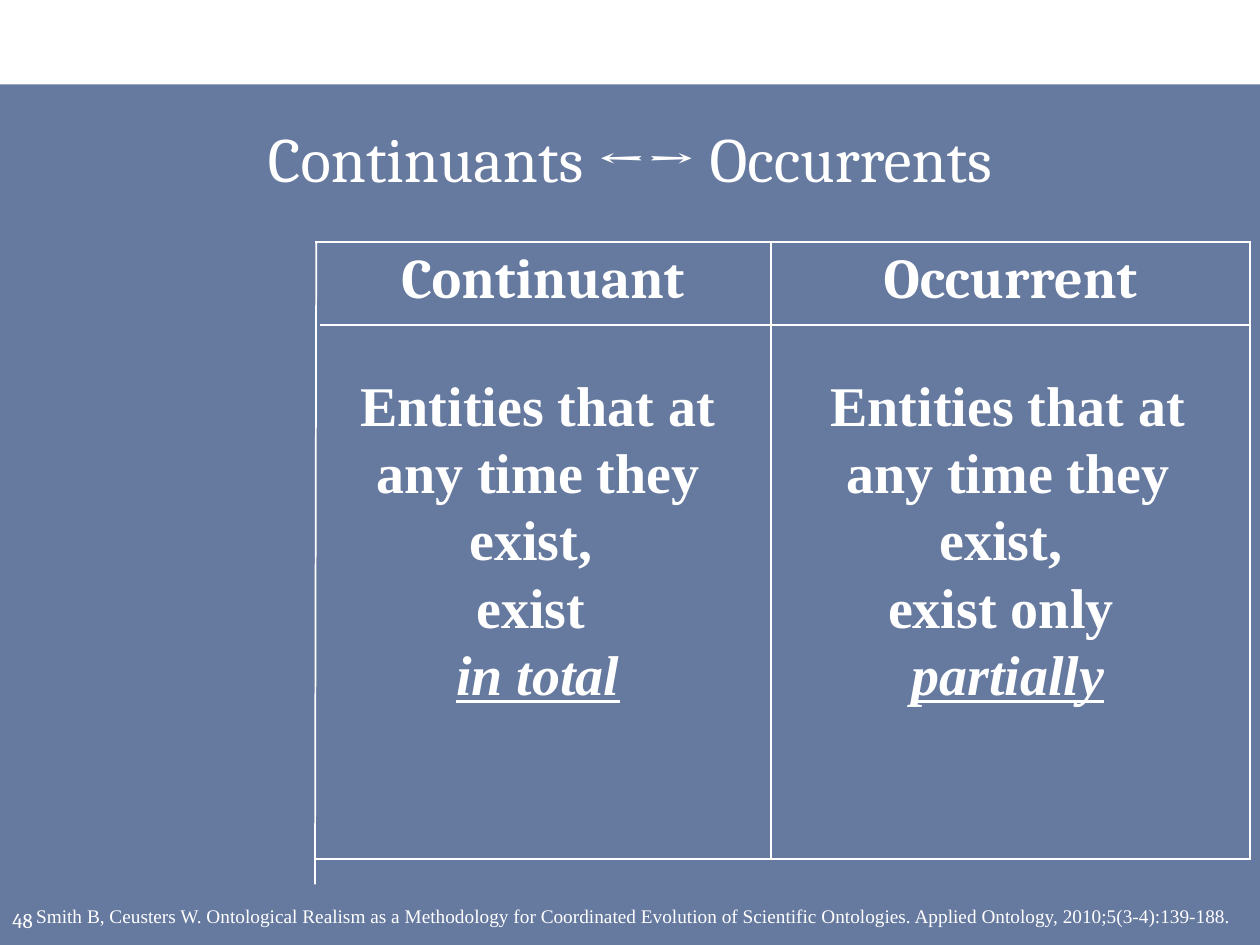
from dataclasses import dataclass

from lxml.etree import SubElement
from pptx import Presentation
from pptx.dml.color import RGBColor
from pptx.enum.shapes import MSO_CONNECTOR as Connector, MSO_SHAPE as Shape
from pptx.enum.text import MSO_ANCHOR as Anchor, MSO_AUTO_SIZE as AutoSize, PP_ALIGN as Align
from pptx.oxml.ns import qn
from pptx.util import Inches, Pt

COLORS = {"text": "FFFFFF", "rule": "FFFFFF", "band": "002060"}
HEADING_FONT, BODY_FONT = "Cambria", "Times New Roman"
COLUMN_WIDTHS = (2.42, 3.62, 3.80)
ROW_HEIGHTS = (0.66, 2.12, 2.12)
TABLE_LEFT, TABLE_TOP = 0.08, 1.92


@dataclass(frozen=True)
class Category:
    name: str
    definition_left: float
    definition: tuple[str, ...]


@dataclass(frozen=True)
class Rule:
    start: tuple[float, float]
    end: tuple[float, float]


CATEGORIES = (
    Category("Continuant", 2.56,
             ("Entities that at any time they exist, ", "exist ", "in total")),
    Category("Occurrent", 6.29,
             ("Entities that at any time they exist, ", "exist only ", "partially")),
)
RULES = (
    Rule((9.91, 2.58), (2.54, 2.58)),
    Rule((2.51, 1.92), (2.5, 7.02)),
)
CITATION = ("Smith B, Ceusters W. Ontological Realism as a Methodology for Coordinated "
            "Evolution of Scientific Ontologies. Applied Ontology, 2010;5(3-4):139-188. ")


def color(key: str) -> RGBColor:
    return RGBColor.from_string(COLORS[key])


def style(paragraph, font_name: str, size: float, align: Align, bold: bool = False) -> None:
    paragraph.alignment = align
    font = paragraph.font
    font.name, font.size, font.bold = font_name, Pt(size), bold
    font.color.rgb = color("text")


def add_text(slide, box: tuple[float, ...], lines: tuple[str, ...], font_name: str,
             size: float, align: Align, bold: bool = False):
    frame = slide.shapes.add_textbox(*map(Inches, box)).text_frame
    frame.word_wrap = True
    frame.text = "\n".join(lines)
    for paragraph in frame.paragraphs:
        style(paragraph, font_name, size, align, bold)
    return frame


def add_band(slide) -> None:
    """Draw the translucent backdrop behind the title."""
    band = slide.shapes.add_shape(Shape.RECTANGLE, 0, Inches(0.67), Inches(10), Inches(6.83))
    band.shadow.inherit = False
    band.line.fill.background()
    band.fill.solid()
    band.fill.fore_color.rgb = color("band")
    SubElement(band.element.spPr.find(".//" + qn("a:srgbClr")), qn("a:alpha"), val="60000")
    slide.shapes.title.element.addprevious(band.element)


def add_title(slide) -> None:
    title = slide.shapes.title
    title.left, title.top, title.width, title.height = map(Inches, (0.25, 0.83, 9.5, 0.83))
    title.text_frame.text = "Continuants ←→ Occurrents"
    title.text_frame.vertical_anchor = Anchor.MIDDLE
    style(title.text_frame.paragraphs[0], HEADING_FONT, 36, Align.CENTER)


def set_borders(cell, sides: str) -> None:
    """Rule the sides named by L, R, T and B; leave the others bare."""
    properties = cell._tc.get_or_add_tcPr()
    for position, side in enumerate("LRTB"):
        line = SubElement(properties, qn(f"a:ln{side}"), w=str(Pt(1)))
        properties.insert(position, line)
        if side in sides:
            fill = SubElement(line, qn("a:solidFill"))
            SubElement(fill, qn("a:srgbClr"), val=COLORS["rule"])
        else:
            SubElement(line, qn("a:noFill"))


def add_category_table(slide) -> None:
    table = slide.shapes.add_table(
        len(ROW_HEIGHTS), len(COLUMN_WIDTHS), Inches(TABLE_LEFT), Inches(TABLE_TOP),
        Inches(sum(COLUMN_WIDTHS)), Inches(sum(ROW_HEIGHTS))).table
    table.first_row = table.horz_banding = False
    for column, width in zip(table.columns, COLUMN_WIDTHS):
        column.width = Inches(width)
    for row, height in zip(table.rows, ROW_HEIGHTS):
        row.height = Inches(height)

    last_row = len(ROW_HEIGHTS) - 1
    for row_index, row in enumerate(table.rows):
        row_sides = {0: "T", last_row: "B"}.get(row_index, "")
        for cell, column_sides in zip(row.cells, ("", "R", "LR")):
            cell.fill.background()
            set_borders(cell, column_sides + row_sides if column_sides else "")
    for column, category in enumerate(CATEGORIES, start=1):
        header = table.cell(0, column).text_frame
        header.text = category.name
        style(header.paragraphs[0], HEADING_FONT, 32, Align.CENTER, bold=True)


def add_rule(slide, rule: Rule) -> None:
    connector = slide.shapes.add_connector(
        Connector.STRAIGHT, *map(Inches, rule.start + rule.end))
    connector.line.color.rgb = color("rule")
    connector.line.width = Pt(1)
    SubElement(connector.element.spPr, qn("a:effectLst"))


def add_definition(slide, category: Category) -> None:
    frame = add_text(slide, (category.definition_left, 2.89, 3.42, 2.79),
                     category.definition, BODY_FONT, 32, Align.CENTER, bold=True)
    frame.auto_size = AutoSize.SHAPE_TO_FIT_TEXT
    emphasis = frame.paragraphs[-1].font
    emphasis.italic = emphasis.underline = True


def main() -> None:
    presentation = Presentation()
    presentation.slide_width, presentation.slide_height = Inches(10), Inches(7.5)
    slide = presentation.slides.add_slide(presentation.slide_layouts[5])

    add_band(slide)
    add_title(slide)
    add_category_table(slide)
    for rule in RULES:
        add_rule(slide, rule)
    for category in CATEGORIES:
        add_definition(slide, category)
    citation = add_text(slide, (0.09, 7.13, 9.82, 0.29), (CITATION,),
                        BODY_FONT, 11, Align.RIGHT)
    citation.auto_size = AutoSize.SHAPE_TO_FIT_TEXT
    page_number = add_text(slide, (0, 7.1, 0.5, 0.4), ("48",), HEADING_FONT, 12, Align.LEFT)
    page_number.vertical_anchor = Anchor.MIDDLE

    presentation.save("out.pptx")


if __name__ == "__main__":
    main()
